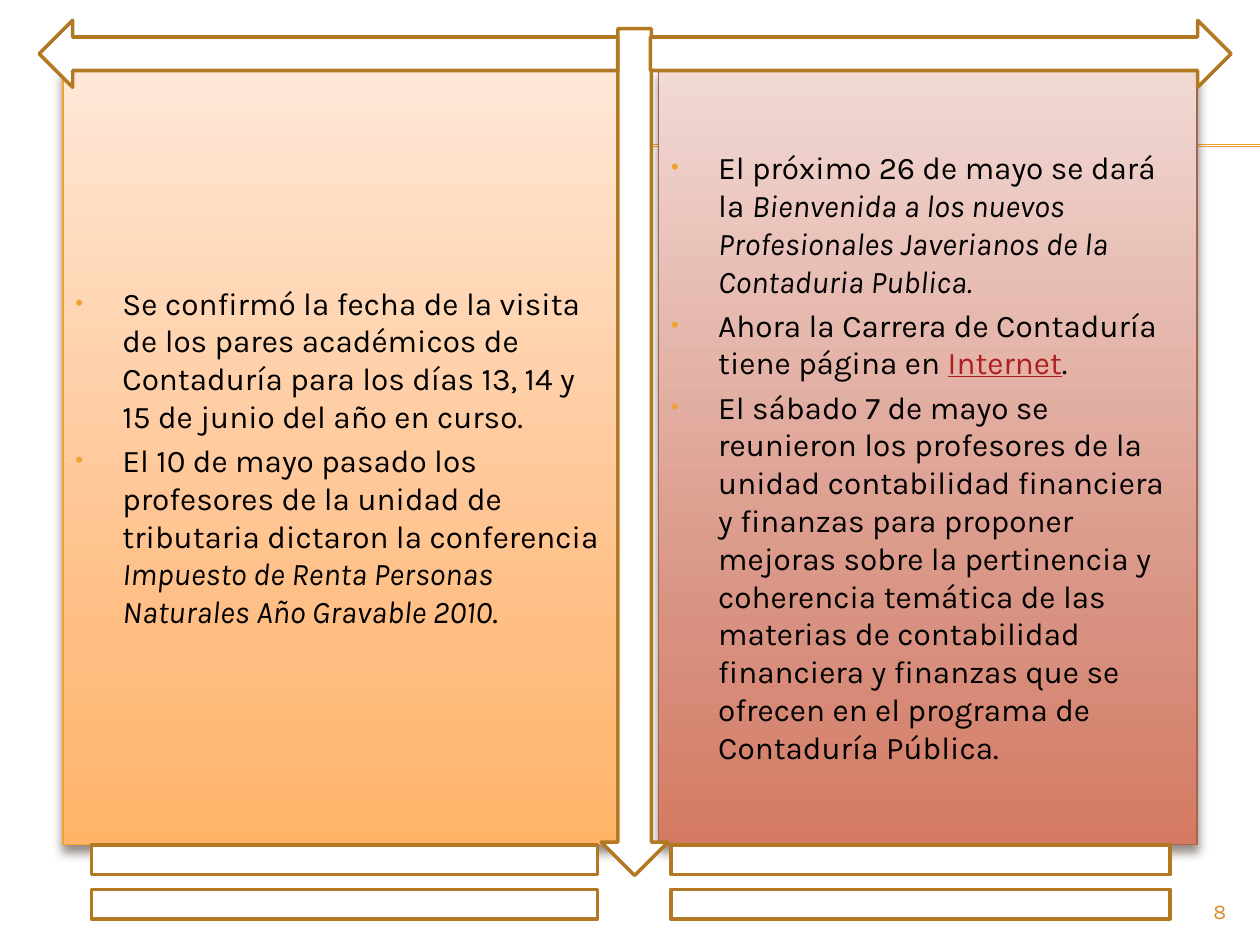
from dataclasses import dataclass

import pptx
import pptx.dml.color
import pptx.enum.shapes
import pptx.enum.text
import pptx.oxml
import pptx.oxml.ns
import pptx.util
from lxml import etree

Cm, Pt = pptx.util.Cm, pptx.util.Pt
MSO_SHAPE = pptx.enum.shapes.MSO_SHAPE
ALIGN = pptx.enum.text.PP_ALIGN
ANCHOR = pptx.enum.text.MSO_ANCHOR
qn = pptx.oxml.ns.qn

COLORS = {
    "white": "FFFFFF",
    "text": "000000",
    "amber": "F0A22E",
    "brown": "B27822",
    "rust": "A5644E",
    "link": "AD1F1F",
    "number": "D48F29",
    "shadow": "4E3B30",
}
BODY = {"name": "Karla", "size": Pt(18), "italic": False, "underline": False}
NUMBER = {"name": "Karla", "size": Pt(12)}
PARAGRAPH = {"alignment": ALIGN.LEFT, "space_before": Pt(0)}
STOPS = (0, 72, 100)


@dataclass
class Box:
    left: float
    top: float
    width: float
    height: float

    def lengths(self) -> list:
        return [Cm(v) for v in (self.left, self.top, self.width, self.height)]


@dataclass
class Part:
    text: str
    style: str = ""


@dataclass
class Panel:
    box: Box
    line: str
    gradient: tuple
    paragraphs: list


@dataclass
class Symbol:
    kind: MSO_SHAPE
    box: Box


PANELS = [
    Panel(Box(1.27, 1.4, 11.23, 15.62), "amber", ("FFE7D7", "FFBE84", "FFB468"), [
        [Part("Se confirmó la fecha de la visita de los pares académicos de "
              "Contaduría para los días 13, 14 y 15 de junio del año en curso.")],
        [Part("El 10 de mayo pasado los profesores de la unidad de tributaria "
              "dictaron la conferencia "),
         Part("Impuesto de Renta Personas Naturales Año Gravable 2010", "italic"),
         Part(".")],
    ]),
    Panel(Box(13.28, 1.4, 10.85, 15.62), "rust", ("F1D9D4", "D89180", "D47A62"), [
        [Part("El próximo 26 de mayo se dará la "),
         Part("Bienvenida a los nuevos Profesionales Javerianos de la "
              "Contaduria Publica.", "italic")],
        [Part("Ahora la Carrera de Contaduría tiene página en "),
         Part("Internet", "underline"),
         Part(".")],
        [Part("El sábado 7 de mayo se reunieron los profesores de la unidad "
              "contabilidad financiera y finanzas para proponer mejoras sobre la "
              "pertinencia y coherencia temática de las materias de contabilidad "
              "financiera y finanzas que se ofrecen en el programa de "
              "Contaduría Pública.")],
    ]),
]
SYMBOLS = [
    Symbol(MSO_SHAPE.DOWN_ARROW, Box(12.12, 0.58, 1.35, 17.07)),
    Symbol(MSO_SHAPE.RIGHT_ARROW, Box(13.11, 0.41, 11.71, 1.35)),
    Symbol(MSO_SHAPE.LEFT_ARROW, Box(0.79, 0.41, 11.66, 1.35)),
    Symbol(MSO_SHAPE.MATH_EQUAL, Box(0, 16.51, 13.89, 2.54)),
    Symbol(MSO_SHAPE.MATH_EQUAL, Box(11.71, 16.51, 13.69, 2.54)),
]


def rgb(name: str) -> pptx.dml.color.RGBColor:
    return pptx.dml.color.RGBColor.from_string(COLORS[name])


def apply(target, formats: dict) -> None:
    for name, value in formats.items():
        setattr(target, name, value)


def add(parent, tag: str, **attributes):
    return etree.SubElement(parent, qn(tag), {k: str(v) for k, v in attributes.items()})


def add_run(p, text: str, formats: dict, color: str) -> None:
    r = p.add_run()
    r.text = text
    apply(r.font, formats)
    r.font.color.rgb = rgb(color)


def add_bullet(p) -> None:
    pPr = p._p.get_or_add_pPr()
    pPr.set("marL", str(Cm(0.95)))
    pPr.set("indent", str(-Cm(0.95)))
    add(add(pPr, "a:buClr"), "a:srgbClr", val=COLORS["amber"])
    add(pPr, "a:buSzPct", val=70000)
    add(pPr, "a:buFont", typeface="Arial")
    add(pPr, "a:buChar", char="•")


def add_shape(slide, kind: MSO_SHAPE, box: Box, line: str, weight: float):
    s = slide.shapes.add_shape(kind, *box.lengths())
    s.shadow.inherit = False
    s.line.color.rgb = rgb(line)
    s.line.width = Pt(weight)
    return s


def set_gradient(s, colors: tuple) -> None:
    s.fill.gradient()
    s.fill.gradient_angle = 270
    stops = s._element.spPr.find(qn("a:gradFill")).find(qn("a:gsLst"))
    for stop in list(stops):
        stops.remove(stop)
    for position, color in zip(STOPS, colors):
        add(add(stops, "a:gs", pos=position * 1000), "a:srgbClr", val=color)


def set_shadow(s) -> None:
    effects = s._element.spPr.find(qn("a:effectLst"))
    shadow = add(effects, "a:outerShdw", blurRad=Pt(6), dist=Pt(4),
                 dir=5400000, rotWithShape=0)
    color = add(shadow, "a:srgbClr", val=COLORS["shadow"])
    add(color, "a:alpha", val=60000)


def add_panel(slide, panel: Panel) -> None:
    s = add_shape(slide, MSO_SHAPE.RECTANGLE, panel.box, panel.line, 0.79)
    set_gradient(s, panel.gradient)
    set_shadow(s)
    tf = s.text_frame
    apply(tf, {"word_wrap": True, "vertical_anchor": ANCHOR.MIDDLE})
    for i, parts in enumerate(panel.paragraphs):
        p = tf.add_paragraph() if i else tf.paragraphs[0]
        add_bullet(p)
        apply(p, PARAGRAPH | ({"space_before": Pt(3.6)} if i else {}))
        for part in parts:
            formats = BODY | ({part.style: True} if part.style else {})
            add_run(p, part.text, formats, "link" if part.style == "underline" else "text")


def add_rule(slide, y: float) -> None:
    s = slide.shapes.add_connector(pptx.enum.shapes.MSO_CONNECTOR.STRAIGHT,
                                   Cm(1.42), Cm(y), Cm(25.4), Cm(y))
    s.line.color.rgb = rgb("amber")
    s.line.width = Pt(0.75)
    add(s._element.spPr, "a:effectLst")


def add_symbol(slide, symbol: Symbol) -> None:
    s = add_shape(slide, symbol.kind, symbol.box, "brown", 2)
    s.fill.solid()
    s.fill.fore_color.rgb = rgb("white")


def add_number(slide, text: str, box: Box) -> None:
    tf = slide.shapes.add_textbox(*box.lengths()).text_frame
    tf.word_wrap = True
    p = tf.paragraphs[0]
    p.alignment = ALIGN.RIGHT
    add_run(p, text, NUMBER, "number")


def main() -> None:
    prs = pptx.Presentation()
    apply(prs, {"slide_width": Cm(25.4), "slide_height": Cm(19.05)})
    slide = prs.slides.add_slide(prs.slide_layouts[6])
    for y in (2.92, 2.95):
        add_rule(slide, y)
    for panel in PANELS:
        add_panel(slide, panel)
    for symbol in SYMBOLS:
        add_symbol(slide, symbol)
    add_number(slide, "8", Box(22.86, 17.98, 2.11, 0.69))
    prs.save("out.pptx")


if __name__ == "__main__":
    main()
